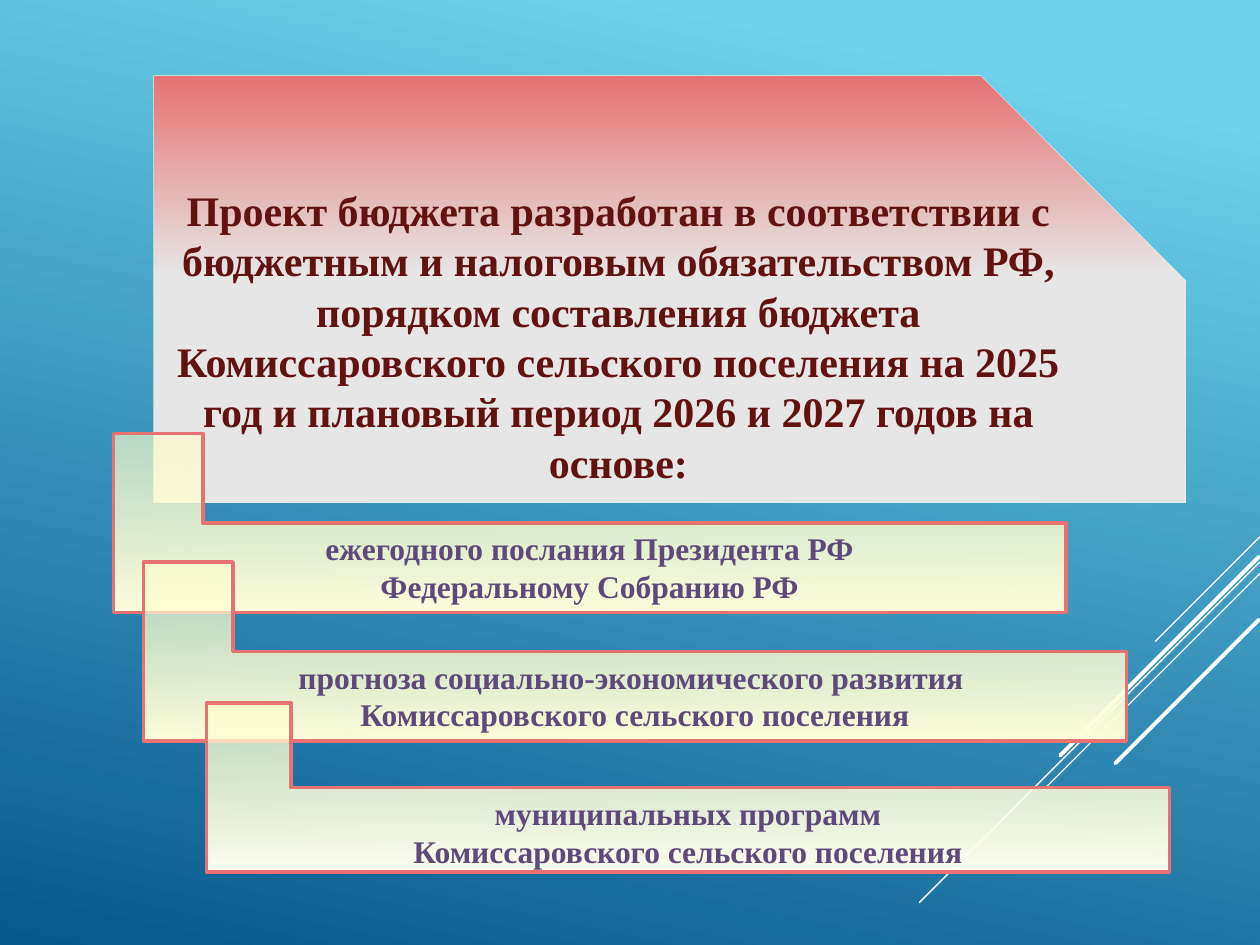
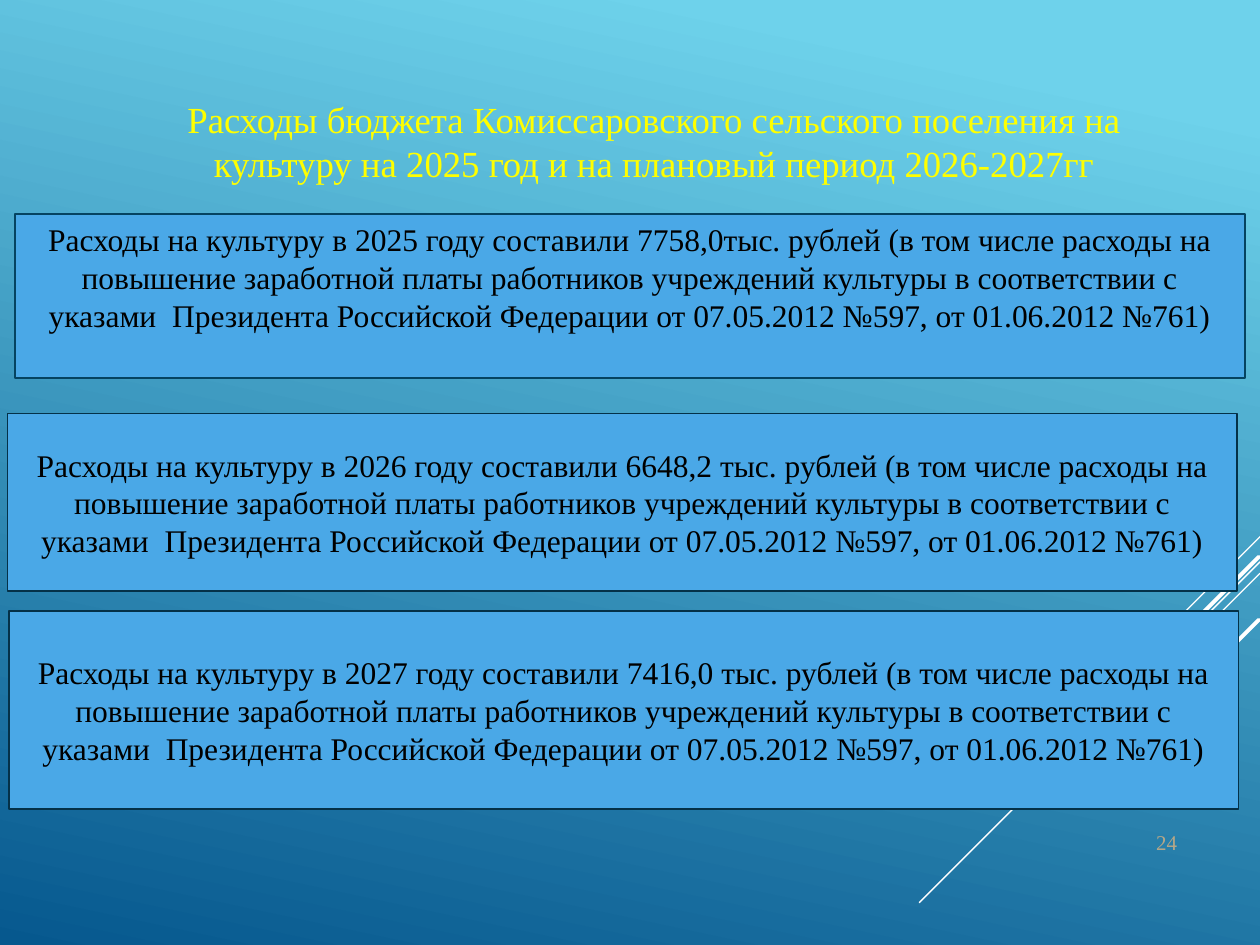
from lxml import etree
from pptx import Presentation
from pptx.dml.color import RGBColor
from pptx.enum.shapes import MSO_CONNECTOR, MSO_SHAPE
from pptx.enum.text import MSO_ANCHOR, PP_ALIGN
from pptx.oxml.ns import qn
from pptx.util import Pt

RECT = MSO_SHAPE.RECTANGLE
SNIP = MSO_SHAPE.SNIP_1_RECTANGLE
STEP = MSO_SHAPE.CORNER
STRAIGHT = MSO_CONNECTOR.STRAIGHT
TOP, MID, LOW = MSO_ANCHOR.TOP, MSO_ANCHOR.MIDDLE, MSO_ANCHOR.BOTTOM
CENTER, RIGHT = PP_ALIGN.CENTER, PP_ALIGN.RIGHT

FONT = "Times New Roman"
WHITE, BLACK, YELLOW, TAN = "FFFFFF", "000000", "FFFF00", "B5A788"
RED, GREY, MAROON, PALE = "E67272", "E6E6E6", "631212", "EAF1DD"
CREAM, PURPLE, BLUE = "FFFFCC", "5F497A", "4AA8E7"
SKY, DEEP = "6ED2EB", "06588E"

RAYS = [
    (720, 306.7, 59.8, 0.75),
    (720, 321.1, 194.7, 0.75),
    (720, 327.6, 123.8, 0.75),
    (719.3, 318.2, 113.5, 2.25),
    (719.3, 354.2, 82, 2.25),
]

HEAD = (
    "Проект бюджета разработан в соответствии с бюджетным и налоговым "
    "обязательством РФ, порядком составления бюджета Комиссаровского "
    "сельского поселения на 2025 год и плановый период 2026 и 2027 годов "
    "на основе:"
)
PLACE = "Комиссаровского сельского поселения"
STEPS = [
    ((64.8, 247.7, 544.3, 102.2), "FFFFDB", 64,
     ["ежегодного послания Президента РФ", "Федеральному Собранию РФ"]),
    ((82.1, 321.1, 561.6, 102.2), "FFFFDB", 60,
     ["прогноза социально-экономического развития ", PLACE]),
    ((118.1, 401.8, 550.1, 96.5), "FFFFEF", 70,
     ["муниципальных программ", PLACE]),
]

TITLE = (
    "Расходы бюджета Комиссаровского сельского поселения на культуру "
    "на 2025 год и на плановый период 2026-2027гг"
)
COST = (
    "Расходы на культуру в {} году составили {} рублей (в том числе расходы "
    "на повышение заработной платы работников учреждений культуры в "
    "соответствии с указами  Президента Российской Федерации от 07.05.2012 "
    "№597, от 01.06.2012 №761)"
)
YEARS = [
    (2025, "7758,0тыс.", (8.6, 122.4, 702.7, 93.6), "054361", TOP),
    (2026, "6648,2 тыс.", (4.3, 236.2, 702.7, 101.5), "043148", MID),
    (2027, "7416,0 тыс.", (5, 349.2, 702.7, 113), "043148", MID),
]


def rgb(code):
    return RGBColor.from_string(code)


class Deck:
    def __init__(self):
        self.prs = Presentation()
        self.prs.slide_width, self.prs.slide_height = Pt(720), Pt(540)
        self.slide = None

    def page(self):
        self.slide = self.prs.slides.add_slide(self.prs.slide_layouts[6])
        self.blend(self.slide.background.fill, [(0.1, SKY), (1, DEEP)], 102)
        for x, y, span, width in RAYS:
            self.ray(x, y, span, width)

    def blend(self, fill, stops, angle):
        fill.gradient()
        fill.gradient_angle = 360 - angle
        for stop, (place, code) in zip(fill.gradient_stops, stops):
            stop.position = place
            stop.color.rgb = rgb(code)

    def ray(self, x, y, span, width):
        line = self.slide.shapes.add_connector(
            STRAIGHT, Pt(x), Pt(y), Pt(x - span), Pt(y + span))
        line.line.color.rgb = rgb(WHITE)
        line.line.width = Pt(width)
        props = line._element.spPr
        props.find(qn("a:ln")).set("cap", "rnd")
        etree.SubElement(props, qn("a:effectLst"))

    def shape(self, kind, box, edge, width):
        item = self.slide.shapes.add_shape(kind, *map(Pt, box))
        item.shadow.inherit = False
        item.line.color.rgb = rgb(edge)
        item.line.width = Pt(width)
        return item

    def fade(self, kind, box, edge, width, stops, clear=100):
        item = self.shape(kind, box, edge, width)
        self.blend(item.fill, stops, 90)
        if clear < 100:
            tint = next(item._element.spPr.iter(qn("a:srgbClr")))
            etree.SubElement(tint, qn("a:alpha"), val=str(clear * 1000))
        return item

    def plain(self, box, edge, code):
        item = self.shape(RECT, box, edge, 1)
        item.fill.solid()
        item.fill.fore_color.rgb = rgb(code)
        return item

    def label(self, box):
        return self.slide.shapes.add_textbox(*map(Pt, box))

    def text(self, item, lines, size, code, bold=False, align=CENTER, anchor=TOP):
        frame = item.text_frame
        frame.word_wrap = True
        frame.vertical_anchor = anchor
        for i, words in enumerate(lines):
            para = frame.add_paragraph() if i else frame.paragraphs[0]
            para.alignment = align
            run = para.add_run()
            run.text = words
            run.font.name = FONT
            run.font.size = Pt(size)
            run.font.bold = bold
            run.font.color.rgb = rgb(code)


def basis(deck):
    deck.page()
    panel = deck.fade(SNIP, (87.8, 43.2, 589.7, 244.1), PALE, 0.25,
                      [(0, RED), (0.47, GREY)])
    panel.adjustments[0] = 0.48
    deck.text(panel, [HEAD], 24, MAROON, bold=True)
    for box, end, clear, lines in STEPS:
        step = deck.fade(STEP, box, RED, 2, [(0, CREAM), (1, end)], clear)
        deck.text(step, lines, 18, PURPLE, bold=True)


def culture(deck):
    deck.page()
    number = deck.label((612, 439.2, 67.7, 52.6))
    deck.text(number, ["24"], 12, TAN, align=RIGHT, anchor=LOW)
    title = deck.label((64.8, 51.8, 617.8, 58.3))
    deck.text(title, [TITLE], 21, YELLOW)
    for year, cost, box, edge, anchor in YEARS:
        bar = deck.plain(box, edge, BLUE)
        deck.text(bar, [COST.format(year, cost)], 18, BLACK, anchor=anchor)


def main():
    deck = Deck()
    basis(deck)
    culture(deck)
    deck.prs.save("out.pptx")


if __name__ == "__main__":
    main()
